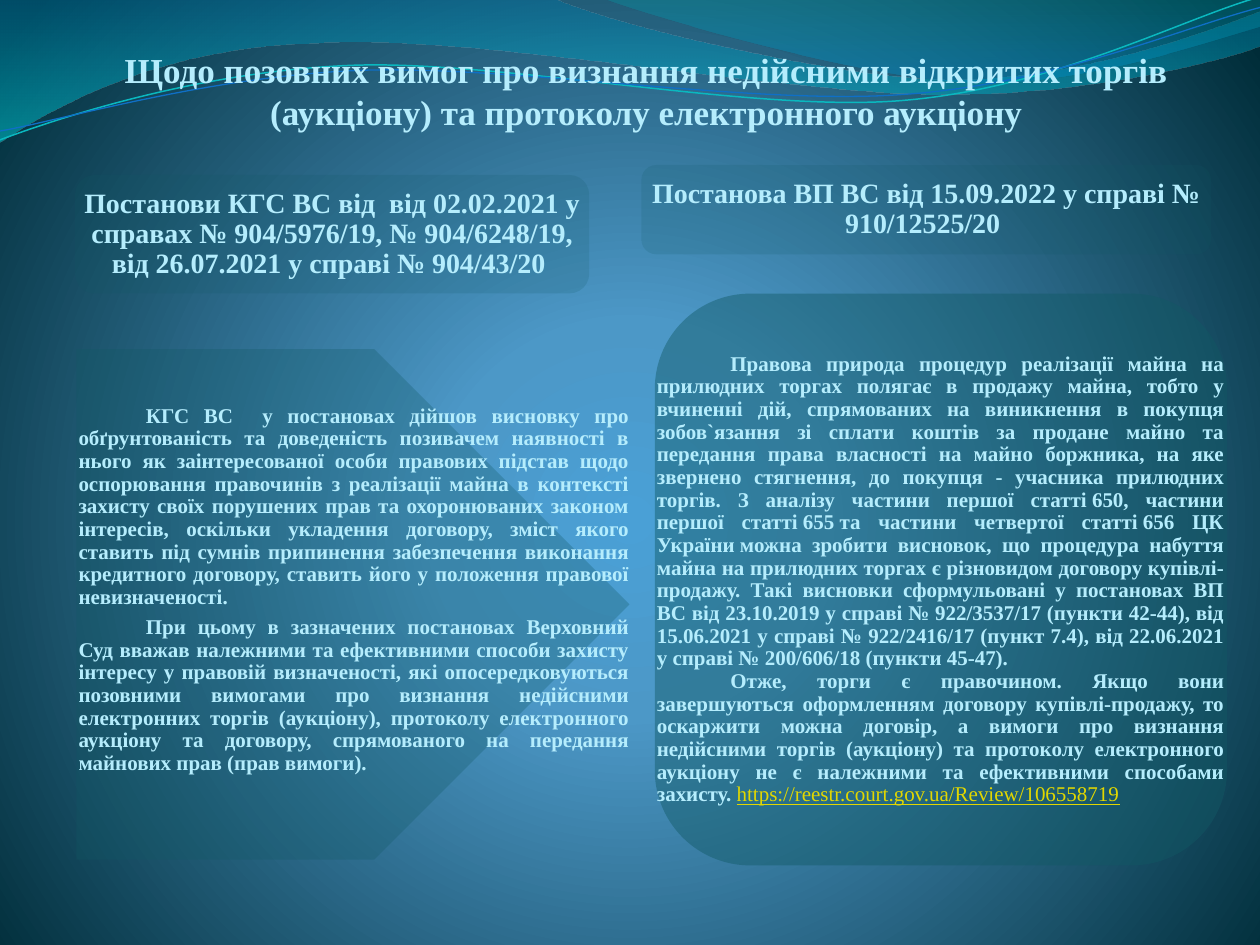
from math import cos, radians, sin

from lxml import etree
from pptx import Presentation
from pptx.dml.color import RGBColor
from pptx.enum.shapes import MSO_SHAPE as SHAPE
from pptx.enum.text import MSO_ANCHOR as ANCHOR, MSO_AUTO_SIZE as AUTO, PP_ALIGN as ALIGN
from pptx.oxml.ns import qn
from pptx.util import Pt

COLORS = {
    "text": "B5EDFD", "link": "E2D700", "panel": "115964",
    "glow": "4AA0D6", "sky": "4C98C7", "deep": "002C38",
    "blue": "0074A1", "aqua": "00C6CF", "teal": "00A1A9", "azure": "008BBF",
    "cyan line": "0AB8BF", "blue line": "0F6FC6",
}
FONT = "Times New Roman"
NBSP = chr(160)
TILT = 2.7


def set_gradient(owner, stops, kind, **direction):
    gradient = owner.find(".//" + qn("a:gradFill"))
    for child in list(gradient):
        gradient.remove(child)
    stop_list = etree.SubElement(gradient, qn("a:gsLst"))
    for position, color, opacity in stops:
        stop = etree.SubElement(stop_list, qn("a:gs"), pos=str(position * 1000))
        tint = etree.SubElement(stop, qn("a:srgbClr"), val=COLORS[color])
        if opacity < 100:
            etree.SubElement(tint, qn("a:alpha"), val=str(opacity * 1000))
    return etree.SubElement(gradient, qn("a:" + kind), **direction)


def write_text(frame, paragraphs, size, margins, formats, frame_formats, tab=None):
    left, top, right, bottom = margins
    settings = {"word_wrap": True, "auto_size": AUTO.NONE,
                "margin_left": Pt(left), "margin_top": Pt(top),
                "margin_right": Pt(right), "margin_bottom": Pt(bottom)}
    for name, value in (settings | frame_formats).items():
        setattr(frame, name, value)
    for number, runs in enumerate(paragraphs):
        paragraph = frame.add_paragraph() if number else frame.paragraphs[0]
        for name, value in formats.items():
            setattr(paragraph, name, value)
        if tab:
            tabs = etree.SubElement(paragraph._p.get_or_add_pPr(), qn("a:tabLst"))
            etree.SubElement(tabs, qn("a:tab"), pos=str(Pt(tab)), algn="l")
        for position, words in enumerate(runs):
            is_link = position > 0
            run = paragraph.add_run()
            run.text = words
            look = {"name": FONT, "size": Pt(size), "bold": not is_link, "underline": is_link}
            for name, value in look.items():
                setattr(run.font, name, value)
            run.font.color.rgb = RGBColor.from_string(COLORS["link" if is_link else "text"])


deck = Presentation()
deck.slide_width, deck.slide_height = Pt(720), Pt(540)
slide = deck.slides.add_slide(deck.slide_layouts[5])

slide.background.fill.gradient()
circle = set_gradient(slide.element, [(0, "glow", 100), (25, "sky", 100), (100, "deep", 100)],
                      "path", path="circle")
etree.SubElement(circle, qn("a:fillToRect"), l="10000", t="110000", r="10000", b="100000")

waves = [
    ([(0, 0), (316.8, -0.7), (342.7, 12.2, 478.1, 45.4, 545.8, 45.4),
      (614.2, 45.4, 689.8, 18.7, 720, 6.5), (720.7, 25.9),
      (707.8, 31.7, 626.4, 54.7, 537.1, 54), (447.8, 54, 275, 20.2, 185, 24.5),
      (92.9, 25.9, 33.1, 59.8, -0.7, 81.4)],
     [(0, "blue", 45), (100, "aqua", 55)], None),
    ([(344.9, -0.7), (366.5, 7.9, 491, 44.6, 553.7, 46.8),
      (616.3, 49.7, 691.9, 23, 720, 15.1), (720, 0)],
     [(0, "teal", 30), (80, "azure", 45)], None),
    ([(0, 79.9), (34.6, 67, 113.8, 41, 199.4, 37.4),
      (284.4, 33.8, 427, 64.1, 513.4, 57.6), (599.8, 51.1, 675.4, 10.8, 718.6, -1.4)],
     None, ("cyan line", 0.85)),
    ([(0, 74.9), (33.8, 69.1, 118.1, 43.9, 203.8, 40.3),
      (290.2, 36.7, 429.8, 60.5, 516.2, 54), (601.9, 48.2, 677.5, 15.1, 720, 4.3)],
     None, ("blue line", 0.75)),
]
for steps, stops, stroke in waves:
    knots = [step[i:i + 2] for step in steps for i in range(0, len(step), 2)]
    if stroke:
        turn, middle_x, middle_y = radians(TILT), 359.5, 42
        knots = [(middle_x + (x - middle_x) * cos(turn) - (y - middle_y) * sin(turn),
                  middle_y + (x - middle_x) * sin(turn) + (y - middle_y) * cos(turn))
                 for x, y in knots]
    corners = [(Pt(x), Pt(y)) for x, y in knots]
    builder = slide.shapes.build_freeform(*corners[0])
    builder.add_line_segments(corners[1:], close=stops is not None)
    wave = builder.convert_to_shape()
    segments = iter(wave.element.findall(".//" + qn("a:lnTo")))
    for step in steps[1:]:
        segment = next(segments)
        if len(step) == 6:
            curve = etree.Element(qn("a:cubicBezTo"))
            segment.addprevious(curve)
            for part in (segment, next(segments), next(segments)):
                curve.append(part[0])
                part.getparent().remove(part)
    wave.shadow.inherit = False
    if stops:
        wave.fill.gradient()
        set_gradient(wave.element, stops, "lin", ang="5400000", scaled="0")
        wave.line.fill.background()
    else:
        wave.rotation = 360 - TILT
        wave.fill.background()
        wave.line.color.rgb = RGBColor.from_string(COLORS[stroke[0]])
        wave.line.width = Pt(stroke[1])

heading = slide.shapes.title
slide.shapes.element.append(heading.element)
heading.left, heading.top, heading.width, heading.height = Pt(48.2), Pt(21), Pt(643.7), Pt(79)
write_text(heading.text_frame,
           [["Щодо позовних вимог про визнання недійсними відкритих торгів (аукціону) та протоколу електронного аукціону"]],
           20, (0, 0, 1.4, 24.2), {"alignment": ALIGN.CENTER}, {"vertical_anchor": ANCHOR.BOTTOM})

ruling_format = {"alignment": ALIGN.CENTER, "line_spacing": 0.9}
reasoning_format = {"alignment": ALIGN.JUSTIFY, "line_spacing": 0.9}
panels = [
    (SHAPE.PENTAGON, (43.7, 199.5, 316, 291.7), 29, 12, (1.2, 0.7, 0, 17),
     reasoning_format | {"space_after": Pt(4.2)}, 38.5,
     [["\tКГС ВС  у постановах дійшов висновку про обґрунтованість та доведеність позивачем наявності в нього як заінтересованої особи правових підстав щодо оспорювання правочинів з реалізації майна в контексті захисту своїх порушених прав та охоронюваних законом інтересів, оскільки укладення договору, зміст якого ставить під сумнів припинення забезпечення виконання кредитного договору, ставить його у положення правової невизначеності. "],
      ["\tПри цьому в зазначених постановах Верховний Суд вважав належними та ефективними способи захисту інтересу у правовій визначеності, які опосередковуються позовними вимогами про визнання недійсними електронних торгів (аукціону), протоколу електронного аукціону та договору, спрямованого на передання майнових прав (прав вимоги)."]]),
    (SHAPE.FLOWCHART_ALTERNATE_PROCESS, (374.2, 167.8, 327, 326.7), 44, 12, (1.2, 1.4, 1.4, 1.4),
     reasoning_format, 42,
     [[f"\tПравова природа процедур реалізації майна на прилюдних торгах полягає в продажу майна, тобто у вчиненні дій, спрямованих на виникнення в покупця зобов`язання зі сплати коштів за продане майно та передання права власності на майно боржника, на яке звернено стягнення, до покупця - учасника прилюдних торгів. З аналізу частини першої статті{NBSP}650, частини першої статті{NBSP}655{NBSP}та частини четвертої статті{NBSP}656 ЦК України{NBSP}можна зробити висновок, що процедура набуття майна на прилюдних торгах є різновидом договору купівлі-продажу. Такі висновки сформульовані у постановах ВП ВС від 23.10.2019 у справі № 922/3537/17 (пункти 42-44), від 15.06.2021 у справі № 922/2416/17 (пункт 7.4), від 22.06.2021 у справі № 200/606/18 (пункти 45-47)."],
      ["\tОтже, торги є правочином. Якщо вони завершуються оформленням договору купівлі-продажу, то оскаржити можна договір, а вимоги про визнання недійсними торгів (аукціону) та протоколу електронного аукціону не є належними та ефективними способами захисту. ",
       "https://reestr.court.gov.ua/Review/106558719"]]),
    (SHAPE.ROUNDED_RECTANGLE, (42.9, 100, 293.8, 67.7), 17, 16, (5,) * 4, ruling_format, None,
     [["Постанови КГС ВС від  від 02.02.2021 у справах № 904/5976/19, № 904/6248/19, від 26.07.2021 у справі № 904/43/20 "]]),
    (SHAPE.ROUNDED_RECTANGLE, (366.5, 94.3, 325.5, 51), 16, 16, (5,) * 4, ruling_format, None,
     [["Постанова ВП ВС від 15.09.2022 у справі № 910/12525/20 "]]),
]
for outline, bounds, opacity, size, margins, formats, tab, paragraphs in panels:
    box = [Pt(length) for length in bounds]
    panel = slide.shapes.add_shape(outline, *box)
    panel.shadow.inherit = False
    panel.fill.solid()
    panel.fill.fore_color.rgb = RGBColor.from_string(COLORS["panel"])
    tint = panel.element.spPr.find(qn("a:solidFill")).find(qn("a:srgbClr"))
    etree.SubElement(tint, qn("a:alpha"), val=str(opacity * 1000))
    panel.line.fill.background()
    wording = slide.shapes.add_textbox(*box)
    write_text(wording.text_frame, paragraphs, size, margins, formats,
               {"vertical_anchor": ANCHOR.MIDDLE}, tab)

deck.save("out.pptx")
